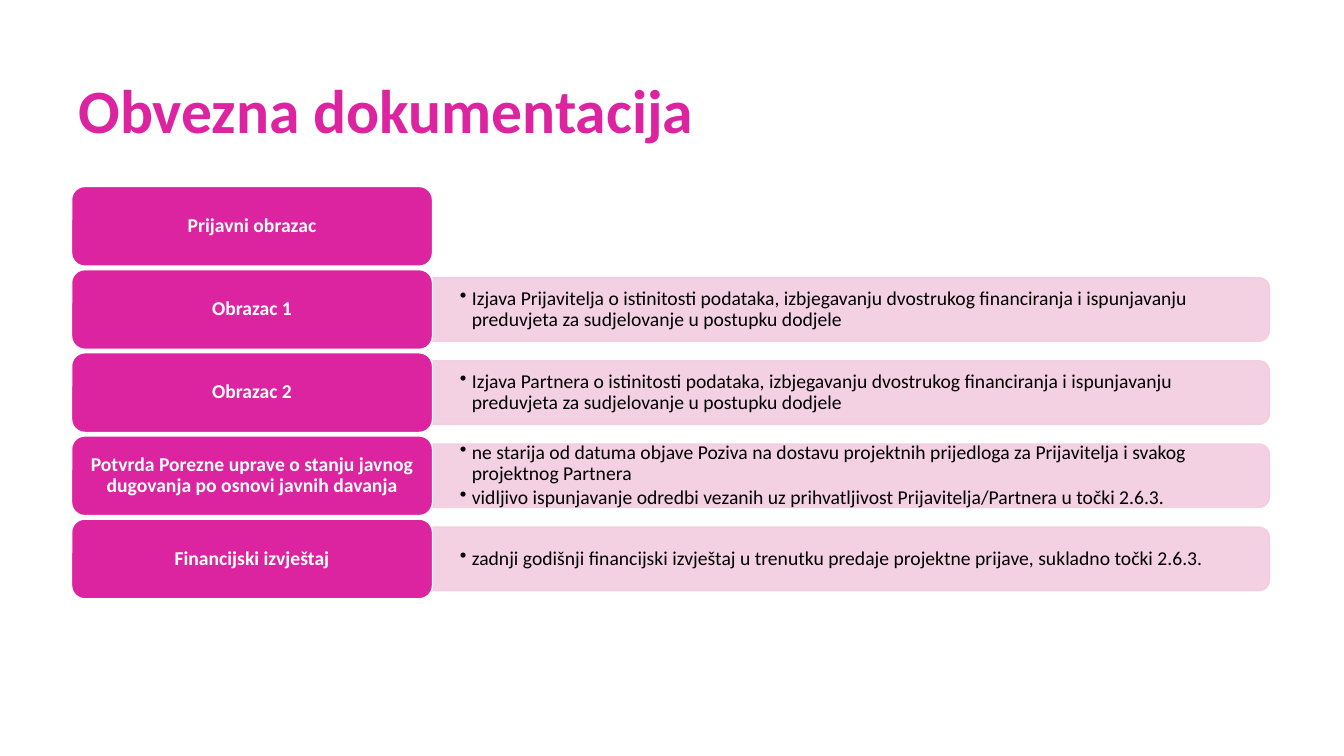
from pptx import Presentation
from pptx.dml.color import RGBColor
from pptx.enum.shapes import MSO_SHAPE as Shape
from pptx.enum.text import MSO_ANCHOR as Anchor, PP_ALIGN as Align
from pptx.oxml.ns import qn
from pptx.util import Inches, Pt
from lxml.etree import SubElement

MAGENTA = RGBColor(0xDC, 0x24, 0xA0)
PALE_PINK = RGBColor(0xF2, 0xCD, 0xDF)
WHITE = RGBColor(0xFF, 0xFF, 0xFF)
BLACK = RGBColor(0, 0, 0)

ROW_TOP, ROW_PITCH = 1.85, 3.3 / 4
LABEL_LEFT, LABEL_WIDTH, LABEL_HEIGHT = 0.71, 3.58, 0.79
BAR_LEFT, BAR_LENGTH, BAR_HEIGHT = 4.29, 8.3, 0.63
DETAIL_WIDTH, DETAIL_HEIGHT = 8.27, 0.57

DOCUMENTS = [
    ("Prijavni obrazac", []),
    ("Obrazac 1", [
        "Izjava Prijavitelja o istinitosti podataka, izbjegavanju dvostrukog "
        "financiranja i ispunjavanju preduvjeta za sudjelovanje u postupku dodjele"]),
    ("Obrazac 2", [
        "Izjava Partnera o istinitosti podataka, izbjegavanju dvostrukog "
        "financiranja i ispunjavanju preduvjeta za sudjelovanje u postupku dodjele"]),
    ("Potvrda Porezne uprave o stanju javnog dugovanja po osnovi javnih davanja", [
        "ne starija od datuma objave Poziva na dostavu projektnih prijedloga "
        "za Prijavitelja i svakog projektnog Partnera",
        "vidljivo ispunjavanje odredbi vezanih uz prihvatljivost "
        "Prijavitelja/Partnera u točki 2.6.3."]),
    ("Financijski izvještaj", [
        "zadnji godišnji financijski izvještaj u trenutku predaje projektne "
        "prijave, sukladno točki 2.6.3."]),
]


def write(shape, lines, size, color, bold=False, align=Align.LEFT,
          margins=(0.1, 0.05), bulleted=False):
    frame = shape.text_frame
    frame.word_wrap = True
    frame.vertical_anchor = Anchor.MIDDLE
    frame.margin_left = frame.margin_right = Inches(margins[0])
    frame.margin_top = frame.margin_bottom = Inches(margins[1])
    for index, line in enumerate(lines):
        paragraph = frame.paragraphs[0] if index == 0 else frame.add_paragraph()
        paragraph.alignment = align
        paragraph.line_spacing = 0.9
        if bulleted:
            paragraph.space_after = Pt(2)
            properties = paragraph._p.get_or_add_pPr()
            properties.set("marL", str(Inches(0.12)))
            properties.set("indent", str(Inches(-0.12)))
            SubElement(properties, qn("a:buChar")).set("char", "•")
        run = paragraph.add_run()
        run.text = line
        run.font.name = "Calibri"
        run.font.size = Pt(size)
        run.font.bold = bold
        run.font.color.rgb = color


def add_block(kind, left, top, width, height, fill, line):
    shape = slide.shapes.add_shape(
        kind, Inches(left), Inches(top), Inches(width), Inches(height))
    shape.shadow.inherit = False
    shape.fill.solid()
    shape.fill.fore_color.rgb = fill
    shape.line.color.rgb = line
    shape.line.width = Pt(1)
    return shape


presentation = Presentation()
presentation.slide_width = Inches(13.33)
presentation.slide_height = Inches(7.5)
slide = presentation.slides.add_slide(presentation.slide_layouts[6])

# Title
title = slide.shapes.add_textbox(Inches(0.68), Inches(0.4), Inches(10.57), Inches(1.45))
write(title, ["Obvezna dokumentacija"], 44, MAGENTA, bold=True)

# One row per required document
for row, (name, details) in enumerate(DOCUMENTS):
    top = ROW_TOP + row * ROW_PITCH
    middle = top + LABEL_HEIGHT / 2

    if details:
        # Bar lies on its side so that its rounded corners face right
        bar = add_block(Shape.ROUND_2_SAME_RECTANGLE,
                        BAR_LEFT + (BAR_LENGTH - BAR_HEIGHT) / 2, middle - BAR_LENGTH / 2,
                        BAR_HEIGHT, BAR_LENGTH, PALE_PINK, PALE_PINK)
        bar.rotation = 90
        for color in bar._element.spPr.iter(qn("a:srgbClr")):
            SubElement(color, qn("a:alpha")).set("val", "90000")

        # Details
        box = slide.shapes.add_textbox(
            Inches(BAR_LEFT), Inches(middle - DETAIL_HEIGHT / 2),
            Inches(DETAIL_WIDTH), Inches(DETAIL_HEIGHT))
        write(box, details, 14, BLACK, margins=(0.27, 0.14), bulleted=True)

    # Label
    label = add_block(Shape.ROUNDED_RECTANGLE, LABEL_LEFT, top,
                      LABEL_WIDTH, LABEL_HEIGHT, MAGENTA, WHITE)
    write(label, [name], 14, WHITE, bold=True, align=Align.CENTER, margins=(0.06, 0.03))

presentation.save("out.pptx")
